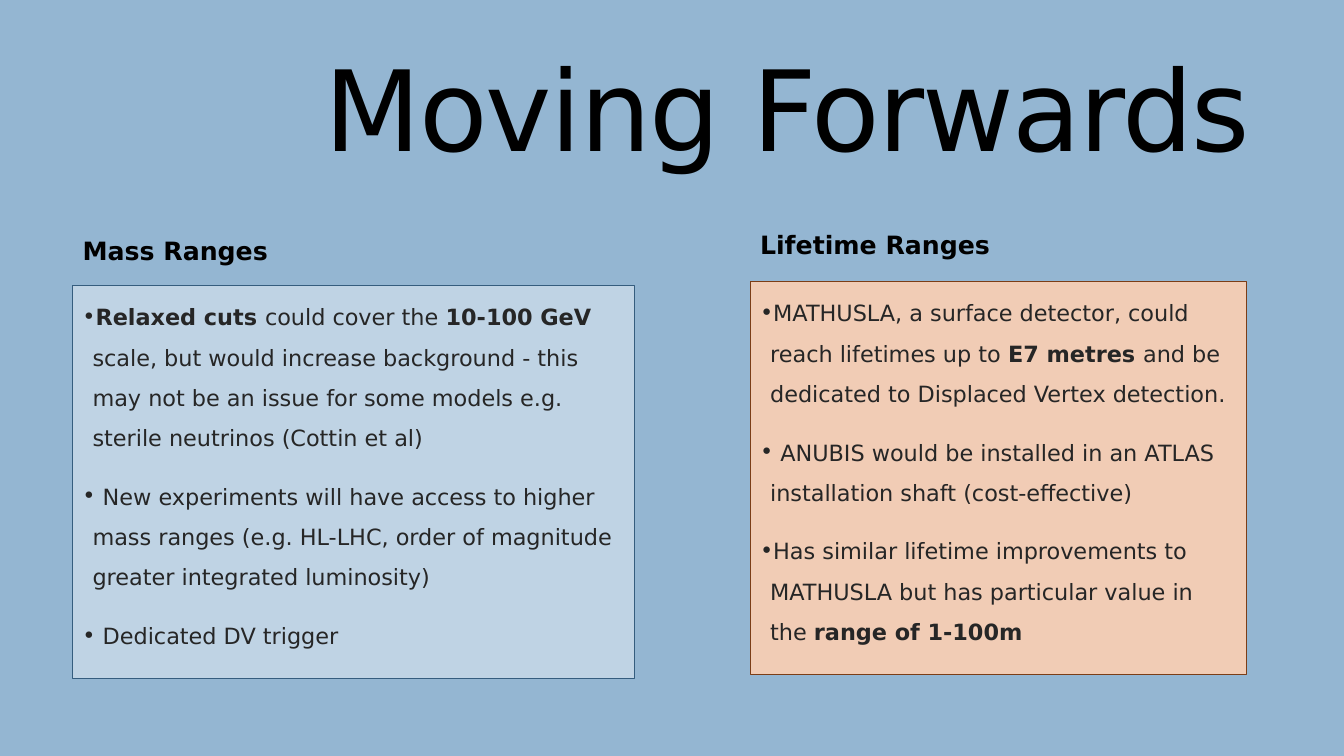
from lxml import etree
from pptx import Presentation
from pptx.dml.color import RGBColor
from pptx.enum.shapes import MSO_SHAPE
from pptx.enum.text import MSO_ANCHOR, PP_ALIGN
from pptx.oxml.ns import qn
from pptx.util import Inches, Pt

RECTANGLE = MSO_SHAPE.RECTANGLE
TOP = MSO_ANCHOR.TOP
LEFT = PP_ALIGN.LEFT
RIGHT = PP_ALIGN.RIGHT

FONT = "DejaVu Sans"
BACKGROUND = RGBColor(0x94, 0xB6, 0xD2)
BLACK = RGBColor(0x00, 0x00, 0x00)
BODY_TEXT = RGBColor(0x26, 0x26, 0x26)
PALE_BLUE = RGBColor(0xBF, 0xD3, 0xE4)
DARK_BLUE = RGBColor(0x35, 0x5D, 0x7E)
PALE_ORANGE = RGBColor(0xF1, 0xCC, 0xB5)
DARK_ORANGE = RGBColor(0x7B, 0x3D, 0x17)

MASS_POINTS = [
    [
        ("Relaxed cuts ", True),
        ("could cover the ", False),
        ("10-100 GeV ", True),
        ("scale, but would increase background - this may not be an issue "
         "for some models e.g. sterile neutrinos (Cottin et al)", False),
    ],
    [(" New experiments will have access to higher mass ranges (e.g. HL-LHC, "
      "order of magnitude greater integrated luminosity)", False)],
    [(" Dedicated DV trigger", False)],
]
LIFETIME_POINTS = [
    [
        ("MATHUSLA, a surface detector, could reach lifetimes up to ", False),
        ("E7 metres ", True),
        ("and be dedicated to Displaced Vertex detection.", False),
    ],
    [(" ANUBIS would be installed in an ATLAS installation shaft "
      "(cost-effective)", False)],
    [
        ("Has similar lifetime improvements to MATHUSLA but has particular "
         "value in the ", False),
        ("range of 1-100m", True),
    ],
]


def add_run(paragraph, text, size, color, bold=False):
    run = paragraph.add_run()
    run.text = text
    run.font.name = FONT
    run.font.size = Pt(size)
    run.font.color.rgb = color
    run.font.bold = bold
    return run


def add_text(slide, left, top, width, height, text, size, bold=False):
    box = slide.shapes.add_textbox(
        Inches(left), Inches(top), Inches(width), Inches(height))
    frame = box.text_frame
    frame.word_wrap = True
    frame.vertical_anchor = TOP
    paragraph = frame.paragraphs[0]
    run = add_run(paragraph, text, size, BLACK, bold)
    return paragraph, run


def add_title(slide, text):
    paragraph, run = add_text(slide, 0.72, 0.55, 11.78, 1.81, text, 80)
    paragraph.alignment = RIGHT
    paragraph.line_spacing = 0.85
    run.font._element.set("spc", "-120")


def add_bullet(paragraph):
    properties = paragraph._p.get_or_add_pPr()
    properties.set("marL", str(Inches(0.1)))
    properties.set("indent", str(-Inches(0.1)))
    font = etree.SubElement(properties, qn("a:buFont"))
    font.set("typeface", FONT)
    bullet = etree.SubElement(properties, qn("a:buChar"))
    bullet.set("char", "•")


def add_panel(slide, left, top, width, fill, line, points):
    panel = slide.shapes.add_shape(
        RECTANGLE, Inches(left), Inches(top), Inches(width), Inches(3.9))
    panel.shadow.inherit = False
    panel.fill.solid()
    panel.fill.fore_color.rgb = fill
    panel.line.color.rgb = line
    panel.line.width = Pt(0.75)
    frame = panel.text_frame
    frame.word_wrap = True
    frame.vertical_anchor = TOP
    for index, point in enumerate(points):
        paragraph = frame.add_paragraph() if index else frame.paragraphs[0]
        add_bullet(paragraph)
        paragraph.alignment = LEFT
        paragraph.line_spacing = 1.5
        if index:
            paragraph.space_before = Pt(13)
        for text, bold in point:
            add_run(paragraph, text, 16, BODY_TEXT, bold)


def main():
    presentation = Presentation()
    presentation.slide_width = Inches(13.33)
    presentation.slide_height = Inches(7.5)
    slide = presentation.slides.add_slide(presentation.slide_layouts[6])
    slide.background.fill.solid()
    slide.background.fill.fore_color.rgb = BACKGROUND

    add_title(slide, "Moving Forwards")
    add_panel(slide, 0.72, 2.83, 5.57, PALE_BLUE, DARK_BLUE, MASS_POINTS)
    add_panel(slide, 7.44, 2.79, 4.92, PALE_ORANGE, DARK_ORANGE, LIFETIME_POINTS)
    add_text(slide, 0.72, 2.29, 4.78, 0.4, "Mass Ranges", 18, True)
    add_text(slide, 7.44, 2.23, 4.78, 0.4, "Lifetime Ranges", 18, True)

    presentation.save("out.pptx")


if __name__ == "__main__":
    main()
